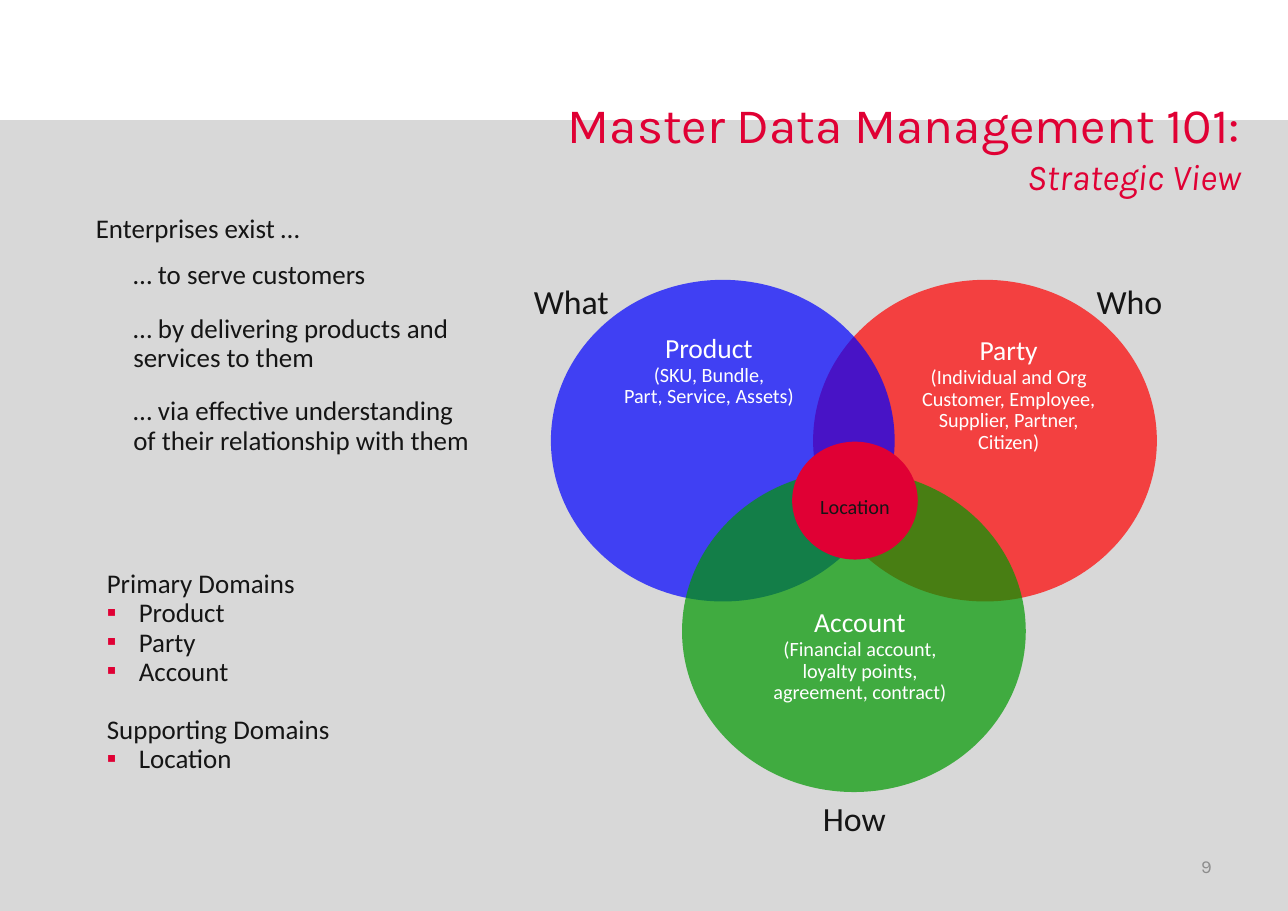
from dataclasses import dataclass

from lxml import etree
from pptx import Presentation
from pptx import util as u
from pptx.dml.color import RGBColor
from pptx.enum import shapes, text
from pptx.oxml.ns import qn

PX = 9144
LEFT, CENTER, RIGHT = text.PP_ALIGN.LEFT, text.PP_ALIGN.CENTER, text.PP_ALIGN.RIGHT
INSETS = (11, 6, 11, 6)


@dataclass(frozen=True)
class Theme:
    """Colours, fonts and type sizes of the slide."""
    accent: str = "E00034"
    ink: str = "151515"
    light: str = "FFFFFF"
    panel: str = "D8D8D8"
    muted: str = "8C8C8C"
    product: str = "0000FF"
    party: str = "FF0000"
    account: str = "009900"
    display: str = "Karla"
    text: str = "Calibri"
    title: float = 32.4
    subtitle: float = 23.8
    question: float = 22.1
    domain: float = 18
    body: float = 17.6
    detail: float = 13.2
    number: float = 12


class Canvas:
    """Draws styled elements on one slide, with lengths in px."""

    def __init__(self, slide, theme):
        self.slide = slide
        self.theme = theme

    def place(self, item, box):
        """Move and size an item."""
        item.left, item.top, item.width, item.height = (u.Emu(n * PX) for n in box)

    def frame(self, item, insets=INSETS, anchor=text.MSO_ANCHOR.TOP, wrap=True):
        """Set the text frame up and return it."""
        frame = item.text_frame
        frame.auto_size = text.MSO_AUTO_SIZE.NONE
        frame.word_wrap = wrap
        frame.vertical_anchor = anchor
        (frame.margin_left, frame.margin_top,
         frame.margin_right, frame.margin_bottom) = (u.Emu(n * PX) for n in insets)
        return frame

    def style(self, paragraph, size, color, font=None, align=LEFT):
        """Set a paragraph's alignment and font."""
        paragraph.alignment = align
        paragraph.font.name = font or self.theme.text
        paragraph.font.color.rgb = RGBColor.from_string(color)
        if size:
            paragraph.font.size = u.Pt(size)

    def shape(self, kind, box, color, opacity=100):
        """Add a filled shape without an outline."""
        shape = self.slide.shapes.add_shape(kind, *(u.Emu(n * PX) for n in box))
        shape.shadow.inherit = False
        shape.line.fill.background()
        shape.fill.solid()
        shape.fill.fore_color.rgb = RGBColor.from_string(color)
        if opacity < 100:
            tint = shape.fill._xPr.find(".//" + qn("a:srgbClr"))
            etree.SubElement(tint, qn("a:alpha"), val=str(opacity * 1000))
        return shape

    def panel(self, box):
        """Add the grey panel behind everything else."""
        panel = self.shape(shapes.MSO_SHAPE.RECTANGLE, box, self.theme.panel)
        self.slide.shapes._spTree.insert(2, panel._element)

    def title(self, box, heading, subheading):
        """Fill the title placeholder with a heading and a subheading."""
        title = self.slide.shapes.title
        self.place(title, box)
        paragraph = self.frame(title, (6, 5, 10, 5), text.MSO_ANCHOR.MIDDLE).paragraphs[0]
        self.style(paragraph, None, self.theme.accent, self.theme.display, RIGHT)
        main = paragraph.add_run()
        main.text, main.font.size = heading, u.Pt(self.theme.title)
        paragraph.add_line_break()
        sub = paragraph.add_run()
        sub.text, sub.font.size, sub.font.italic = subheading, u.Pt(self.theme.subtitle), True

    def label(self, box, lines, color, align=CENTER, font=None,
              anchor=text.MSO_ANCHOR.TOP, wrap=True):
        """Add a text box of (wording, size) lines."""
        label = self.slide.shapes.add_textbox(*(u.Emu(n * PX) for n in box))
        frame = self.frame(label, INSETS, anchor, wrap)
        for i, (wording, size) in enumerate(lines):
            paragraph = frame.add_paragraph() if i else frame.paragraphs[0]
            paragraph.text = wording
            paragraph.line_spacing = 0.9
            self.style(paragraph, size, color, font, align)

    def body(self, index, box, lines):
        """Fill a body placeholder with (wording, indent, space before, bullet) lines."""
        body = self.slide.placeholders[index]
        self.place(body, box)
        frame = self.frame(body)
        for i, (wording, indent, before, bullet) in enumerate(lines):
            paragraph = frame.add_paragraph() if i else frame.paragraphs[0]
            paragraph.text = wording
            paragraph.line_spacing = 0.9
            paragraph.space_before = u.Pt(before)
            props = paragraph._p.get_or_add_pPr()
            props.set("marL", str(indent * PX))
            props.set("indent", str(-indent * PX if bullet else 0))
            if bullet:
                tint = etree.SubElement(props, qn("a:buClr"))
                etree.SubElement(tint, qn("a:srgbClr"), val=self.theme.accent)
                etree.SubElement(props, qn("a:buFont"), typeface=self.theme.text)
                etree.SubElement(props, qn("a:buChar"), char=bullet)
            else:
                etree.SubElement(props, qn("a:buNone"))
            self.style(paragraph, self.theme.body, self.theme.ink)

    def domain(self, circle, color, caption, name, details, question_box, question):
        """Add a translucent circle with its caption and its question."""
        self.shape(shapes.MSO_SHAPE.OVAL, circle, color, 70)
        lines = [(name, self.theme.domain)] + [(d, self.theme.detail) for d in details]
        self.label(caption, lines, self.theme.light)
        self.label(question_box, [(question, self.theme.question)], self.theme.ink, wrap=False)

    def core(self, box, wording):
        """Add the solid circle at the centre of the diagram."""
        core = self.shape(shapes.MSO_SHAPE.OVAL, box, self.theme.accent)
        frame = self.frame(core, (10, 11, 10, 0), text.MSO_ANCHOR.MIDDLE, False)
        frame.text = wording
        self.style(frame.paragraphs[0], self.theme.detail, self.theme.ink, align=CENTER)


def main():
    """Build the slide and save it."""
    deck = Presentation()
    deck.slide_width, deck.slide_height = u.Emu(1169 * PX), u.Emu(827 * PX)
    theme = Theme()
    canvas = Canvas(deck.slides.add_slide(deck.slide_layouts[3]), theme)

    canvas.panel((0, 109, 1169, 718))
    canvas.title((50, 84, 1086, 97), "Master Data Management 101:", "Strategic View")
    canvas.body(1, (76, 189, 371, 232), [
        ("Enterprises exist …", 0, 0, None),
        ("… to serve customers", 34, 11.5, None),
        ("… by delivering products and services to them", 34, 16, None),
        ("… via effective understanding of their relationship with them", 34, 16, None),
    ])
    canvas.body(2, (86, 512, 337, 225), [
        ("Primary Domains", 0, 0, None),
        ("Product", 29, 0, "▪"),
        ("Party", 29, 0, "▪"),
        ("Account", 29, 0, "▪"),
        ("Supporting Domains", 0, 19.3, None),
        ("Location", 29, 0, "▪"),
    ])

    canvas.domain((738, 254, 312, 292), theme.party, (818, 300, 195, 139), "Party",
                  ["(Individual and Org Customer, Employee, Supplier, Partner, Citizen)"],
                  (984, 253, 82, 45), "Who")
    canvas.domain((500, 254, 312, 292), theme.product, (546, 298, 195, 99), "Product",
                  ["(SKU, Bundle,", "Part, Service, Assets)"],
                  (473, 253, 91, 45), "What")
    canvas.domain((619, 427, 312, 292), theme.account, (683, 547, 195, 119), "Account",
                  ["(Financial account, loyalty points, agreement, contract)"],
                  (736, 722, 79, 45), "How")
    canvas.core((719, 401, 114, 107), "Location")
    canvas.label((838, 766, 273, 44), [("9", theme.number)], theme.muted, RIGHT,
                 theme.display, text.MSO_ANCHOR.MIDDLE)
    deck.save("out.pptx")


if __name__ == "__main__":
    main()
